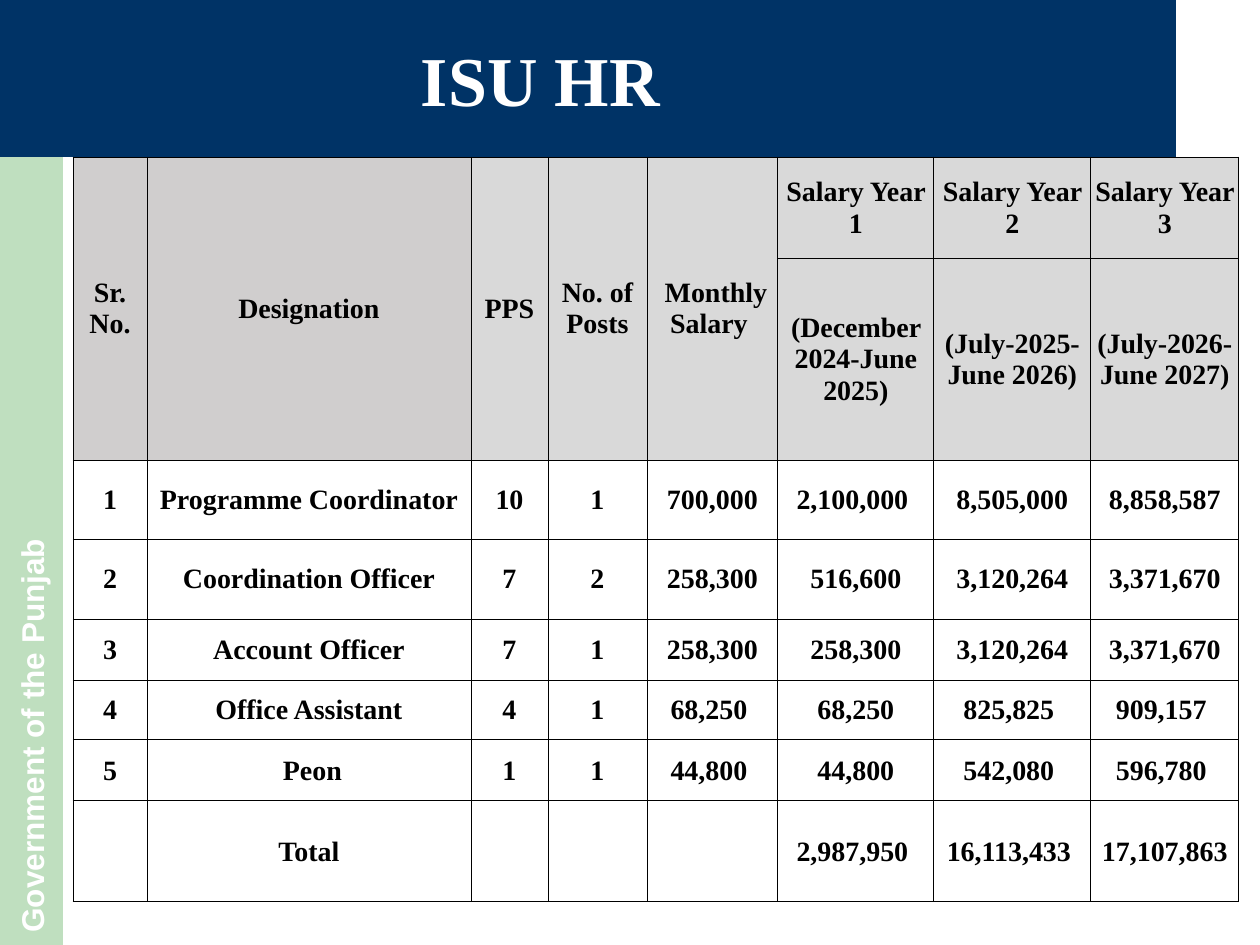
from lxml import etree
from pptx import Presentation
from pptx import util as u
from pptx.dml.color import RGBColor
from pptx.enum import shapes, text
from pptx.oxml import parse_xml
from pptx.oxml.ns import nsdecls, qn

NAVY = RGBColor(0x00, 0x33, 0x66)
GREEN = RGBColor(0x00, 0x80, 0x00)
WHITE = RGBColor(0xFF, 0xFF, 0xFF)
BLACK = RGBColor(0x00, 0x00, 0x00)
WARM_GREY = RGBColor(0xD0, 0xCE, 0xCE)
GREY = RGBColor(0xD9, 0xD9, 0xD9)

TITLE = "ISU HR"
GOVERNMENT = "Government of the Punjab"
HEADINGS = ["Sr. No.", "Designation", "PPS", "No. of Posts", " Monthly Salary ",
            "Salary Year 1", "Salary Year 2", "Salary Year 3"]
PERIODS = ["", "", "", "", "", "(December 2024-June 2025)",
           "(July-2025-June 2026)", "(July-2026-June 2027)"]
POSTS = [
    ["1", "Programme Coordinator", "10", "1", " 700,000 ", "2,100,000 ", " 8,505,000 ", " 8,858,587 "],
    ["2", "Coordination Officer", "7", "2", " 258,300 ", " 516,600 ", " 3,120,264 ", " 3,371,670 "],
    ["3", "Account Officer", "7", "1", " 258,300 ", " 258,300 ", " 3,120,264 ", " 3,371,670 "],
    ["4", "Office Assistant", "4", "1", "68,250 ", " 68,250 ", "825,825 ", "909,157 "],
    ["5", " Peon", "1", "1", "44,800 ", " 44,800 ", "542,080 ", "596,780 "],
]
TOTAL = ["", "Total", "", "", "", "2,987,950 ", "16,113,433 ", " 17,107,863 "]
ROWS = [HEADINGS, PERIODS, *POSTS, TOTAL]
COLUMN_WIDTHS = [74, 324, 77, 99, 131, 156, 157, 148]
ROW_HEIGHTS = [101, 202, 79, 80, 61, 60, 61, 101]
HEADING_ROWS = 2
SPANNING_COLUMNS = 5
WARM_COLUMNS = 2


def px(count):
    return u.Emu(count * 914400 // 126)


def write(frame, words, size, font, color, align):
    frame.text = words
    paragraph = frame.paragraphs[0]
    paragraph.alignment = align
    for run in paragraph.runs:
        run.font.size = u.Pt(size)
        run.font.name = font
        run.font.bold = True
        run.font.color.rgb = color


def add_panel(slide, left, top, width, height, color):
    panel = slide.shapes.add_shape(shapes.MSO_SHAPE.RECTANGLE,
                                   px(left), px(top), px(width), px(height))
    panel.shadow.inherit = False
    panel.fill.solid()
    panel.fill.fore_color.rgb = color
    panel.line.fill.background()
    panel.text_frame.vertical_anchor = text.MSO_ANCHOR.MIDDLE
    return panel


def add_borders(cell):
    properties = cell._tc.get_or_add_tcPr()
    for position, side in enumerate(("lnL", "lnR", "lnT", "lnB")):
        properties.insert(position, parse_xml(
            f'<a:{side} {nsdecls("a")} w="{u.Pt(0.5)}"><a:solidFill>'
            f'<a:srgbClr val="{BLACK}"/></a:solidFill></a:{side}>'))


def fill_cell(cell, row, column):
    cell.margin_left = cell.margin_right = cell.margin_top = px(1)
    cell.margin_bottom = 0
    cell.vertical_anchor = text.MSO_ANCHOR.MIDDLE
    if row < HEADING_ROWS:
        cell.fill.solid()
        cell.fill.fore_color.rgb = WARM_GREY if column < WARM_COLUMNS else GREY
    else:
        cell.fill.background()
    add_borders(cell)
    write(cell.text_frame, ROWS[row][column], 16, "Times New Roman", BLACK, text.PP_ALIGN.CENTER)


def add_salaries(slide):
    salaries = slide.shapes.add_table(
        len(ROWS), len(HEADINGS), px(73), px(157),
        px(sum(COLUMN_WIDTHS)), px(sum(ROW_HEIGHTS))).table
    salaries.first_row = salaries.horz_banding = False
    for column, width in zip(salaries.columns, COLUMN_WIDTHS):
        column.width = px(width)
    for row, height in zip(salaries.rows, ROW_HEIGHTS):
        row.height = px(height)
    for row in range(len(ROWS)):
        for column in range(len(HEADINGS)):
            fill_cell(salaries.cell(row, column), row, column)
    for column in range(SPANNING_COLUMNS):
        salaries.cell(0, column).merge(salaries.cell(HEADING_ROWS - 1, column))


def main():
    deck = Presentation()
    deck.slide_width, deck.slide_height = px(1260), px(945)
    slide = deck.slides.add_slide(deck.slide_layouts[6])

    add_panel(slide, 1081, 0, 95, 157, NAVY)
    sidebar = add_panel(slide, 0, 157, 63, 788, GREEN)
    green = sidebar.fill._xPr.find(qn("a:solidFill"))[0]
    etree.SubElement(green, qn("a:alpha")).set("val", "25000")
    sidebar.text_frame._txBody.bodyPr.set("vert", "vert270")
    write(sidebar.text_frame, GOVERNMENT, 18, "Arial", WHITE, text.PP_ALIGN.LEFT)

    header = add_panel(slide, 0, 0, 1081, 157, NAVY)
    write(header.text_frame, TITLE, 40, "Times New Roman", WHITE, text.PP_ALIGN.CENTER)

    add_salaries(slide)
    deck.save("out.pptx")


if __name__ == "__main__":
    main()
